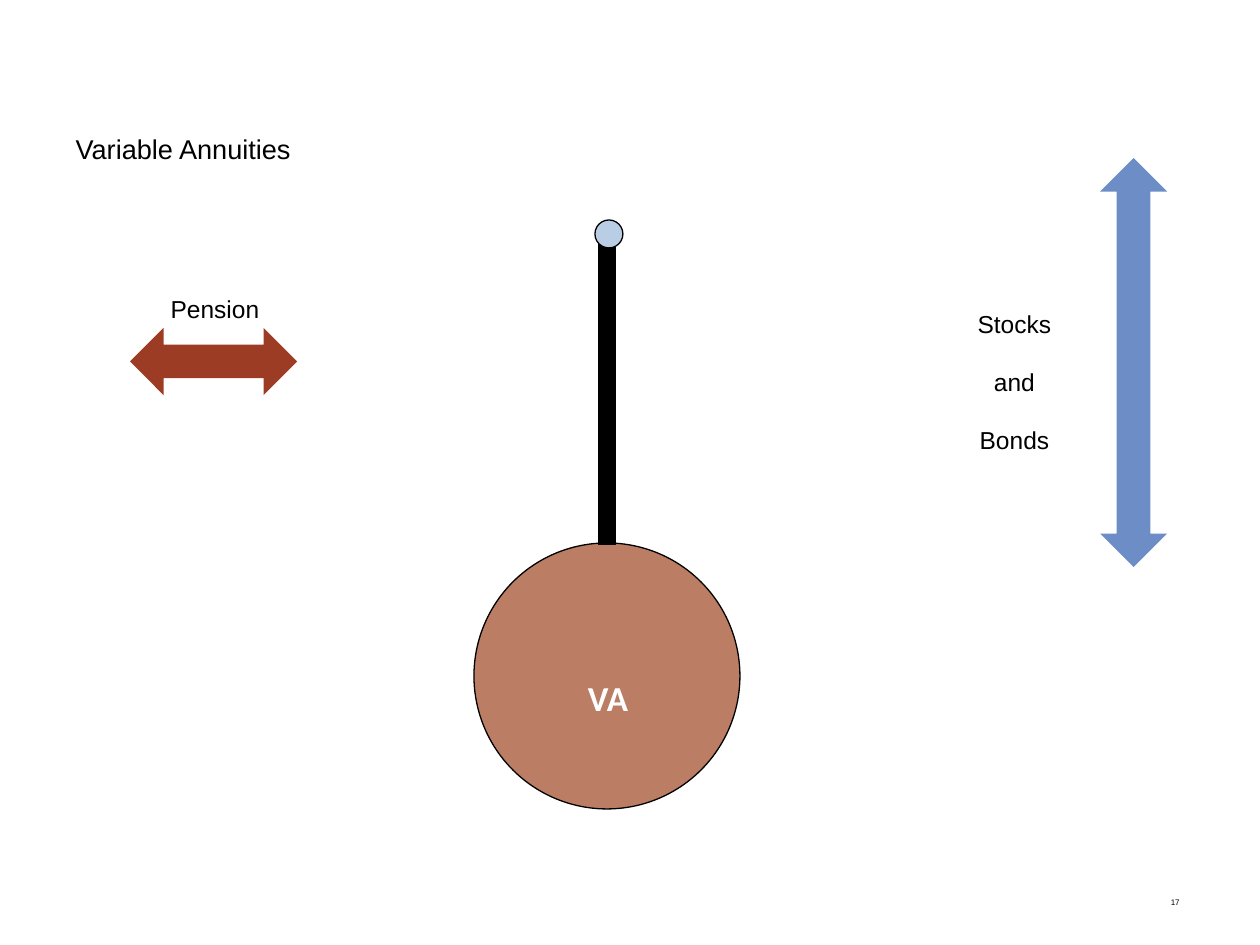
from dataclasses import dataclass

from lxml.etree import SubElement
from pptx import Presentation
from pptx.dml.color import RGBColor
from pptx.enum.shapes import MSO_CONNECTOR, MSO_SHAPE
from pptx.enum.text import MSO_ANCHOR, MSO_AUTO_SIZE, PP_ALIGN
from pptx.oxml.ns import qn
from pptx.util import Emu, Pt

PIXELS_PER_INCH = 126
TITLE_ONLY_LAYOUT = 5


def px(length):
    return Emu(round(length * 914400 / PIXELS_PER_INCH))


@dataclass(frozen=True)
class Theme:
    ink: str = "000000"
    white: str = "FFFFFF"
    bob: str = "BB7D63"
    pivot: str = "B9CDE5"
    pension: str = "9C3C25"
    market: str = "6C8DC5"
    font: str = "Arial"
    bob_font: str = "Calibri"
    title_size: float = 15.5
    label_size: float = 14
    bob_size: float = 20
    number_size: float = 4.6
    outline: float = 0.75
    rod: float = 10


class SlideBuilder:
    def __init__(self, slide, theme):
        self.slide = slide
        self.theme = theme

    def fill_text(self, box, paragraphs, size, align, anchor, color=None,
                  font=None, bold=False, line_spacing=None):
        frame = box.text_frame
        frame.word_wrap = True
        frame.auto_size = MSO_AUTO_SIZE.NONE
        frame.vertical_anchor = anchor
        frame.text = "\n".join(paragraphs)
        for para in frame.paragraphs:
            para.alignment = align
            para.line_spacing = line_spacing
            para.font.name = font or self.theme.font
            para.font.size = Pt(size)
            para.font.bold = bold
            para.font.color.rgb = RGBColor.from_string(color or self.theme.ink)

    def title(self, text, left, top, width, height):
        box = self.slide.shapes.title
        box.left, box.top, box.width, box.height = map(px, (left, top, width, height))
        self.fill_text(box, [text], self.theme.title_size, PP_ALIGN.LEFT, MSO_ANCHOR.BOTTOM)

    def text(self, paragraphs, left, top, width, height, size,
             align=PP_ALIGN.CENTER, anchor=MSO_ANCHOR.MIDDLE, **style):
        box = self.slide.shapes.add_textbox(*map(px, (left, top, width, height)))
        self.fill_text(box, paragraphs, size, align, anchor, **style)

    def shape(self, kind, left, top, width, height, fill, outlined=False):
        shape = self.slide.shapes.add_shape(kind, *map(px, (left, top, width, height)))
        shape.shadow.inherit = False
        shape.fill.solid()
        shape.fill.fore_color.rgb = RGBColor.from_string(fill)
        if outlined:
            shape.line.color.rgb = RGBColor.from_string(self.theme.ink)
            shape.line.width = Pt(self.theme.outline)
        else:
            shape.line.fill.background()
        return shape

    def circle(self, left, top, diameter, fill):
        self.shape(MSO_SHAPE.OVAL, left, top, diameter, diameter, fill, outlined=True)

    def double_arrow(self, left, top, width, height, fill, rotation=0):
        arrow = self.shape(MSO_SHAPE.LEFT_RIGHT_ARROW, left, top, width, height, fill)
        arrow.rotation = rotation

    def line(self, start_x, start_y, end_x, end_y, width):
        line = self.slide.shapes.add_connector(
            MSO_CONNECTOR.STRAIGHT, *map(px, (start_x, start_y, end_x, end_y)))
        line.line.color.rgb = RGBColor.from_string(self.theme.ink)
        line.line.width = Pt(width)
        SubElement(line._element.spPr, qn("a:effectLst"))


def main():
    deck = Presentation()
    deck.slide_width, deck.slide_height = px(1260), px(945)
    theme = Theme()
    page = SlideBuilder(deck.slides.add_slide(deck.slide_layouts[TITLE_ONLY_LAYOUT]), theme)

    page.title("Variable Annuities", 63, 94, 701, 77)

    page.circle(474, 543, 266, theme.bob)
    page.line(607, 241, 607, 545, theme.rod)
    page.circle(595, 220, 28, theme.pivot)
    page.text(["VA"], 518, 653, 180, 90, theme.bob_size,
              color=theme.white, font=theme.bob_font, bold=True)

    page.text(["Pension"], 0, 265, 430, 88, theme.label_size)
    page.double_arrow(130, 328, 167, 67, theme.pension)

    page.text(["Stocks\vand", "Bonds"], 819, 275, 391, 190, theme.label_size,
              anchor=MSO_ANCHOR.TOP, line_spacing=Pt(33))
    page.double_arrow(929, 329, 409, 67, theme.market, rotation=270)

    page.text(["17"], 898, 871, 294, 63, theme.number_size, align=PP_ALIGN.RIGHT)

    deck.save("out.pptx")


if __name__ == "__main__":
    main()
